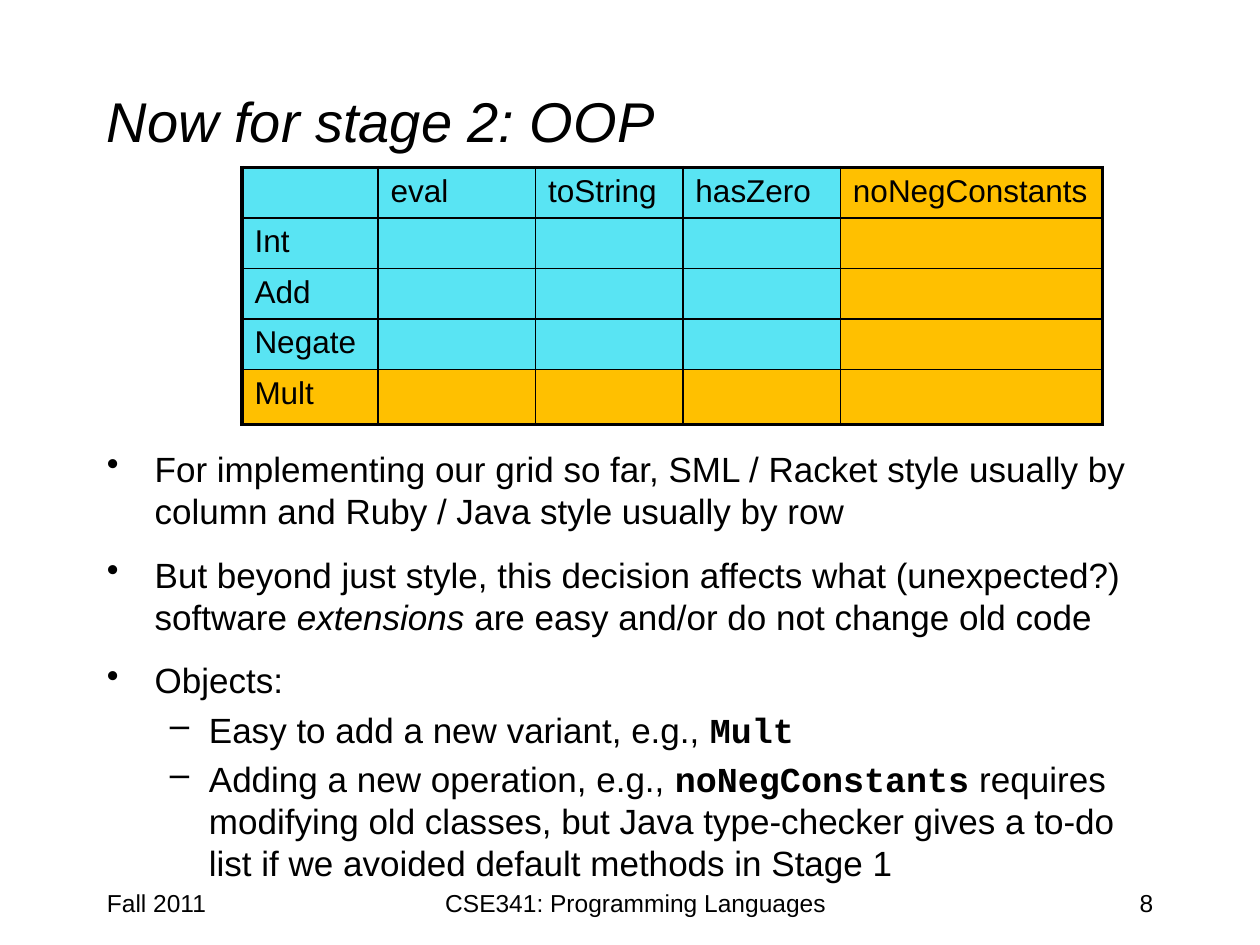
import pptx
import pptx.dml.color
import pptx.enum.text
import pptx.oxml.ns
import pptx.util
from lxml import etree

Inches, Pt = pptx.util.Inches, pptx.util.Pt
ALIGN = pptx.enum.text.PP_ALIGN
ANCHOR = pptx.enum.text.MSO_ANCHOR

BLACK, CYAN, AMBER = "000000", "59E4F3", "FFC000"
SANS, MONO = "Arial", "Courier New"

TITLE = "Now for stage 2: OOP"
OPERATIONS = ["", "eval", "toString", "hasZero", "noNegConstants"]
VARIANTS = ["Int", "Add", "Negate", "Mult"]
COLUMN_WIDTHS = [1.08, 1.25, 1.17, 1.25, 2.08]
ROW_HEIGHTS = [0.38, 0.38, 0.38, 0.38, 0.44]

# (level, space before in points, [(text, style), ...])
POINTS = [
    (0, 4, [("For implementing our grid so far, SML / Racket style usually by "
             "column and Ruby / Java style usually by row", "plain")]),
    (0, 12.5, [("But beyond just style, this decision affects what (unexpected?) software ", "plain"),
               ("extensions", "italic"),
               (" are easy and/or do not change old code", "plain")]),
    (0, 12.5, [("Objects:", "plain")]),
    (1, 4, [("Easy to add a new variant, e.g., ", "plain"), ("Mult", "code")]),
    (1, 4, [("Adding a new operation, e.g., ", "plain"), ("noNegConstants", "code"),
            (" requires modifying old classes, but Java type-checker gives a to-do "
             "list if we avoided default methods in Stage 1", "plain")]),
]
# level: (bullet, left margin, hanging indent)
BULLETS = {0: ("•", 0.38, 0.38), 1: ("–", 0.81, 0.31)}

# (text, left, width, alignment)
FOOTERS = [
    ("Fall 2011", 0.75, 2.08, ALIGN.LEFT),
    ("CSE341: Programming Languages", 3.17, 3.75, ALIGN.CENTER),
    ("8", 7.17, 2.08, ALIGN.RIGHT),
]


def color(value):
    return pptx.dml.color.RGBColor.from_string(value)


def set_font(font, size, name=SANS):
    font.size, font.name = Pt(size), name
    font.color.rgb = color(BLACK)


def add_text_frame(page, left, top, width, height, anchor=ANCHOR.TOP):
    box = page.shapes.add_textbox(Inches(left), Inches(top), Inches(width), Inches(height))
    frame = box.text_frame
    frame.word_wrap = True
    frame.vertical_anchor = anchor
    return frame


def add_line(page, text, place, size, align=ALIGN.LEFT, anchor=ANCHOR.TOP):
    """Add a text box holding one paragraph and return that paragraph."""
    paragraph = add_text_frame(page, *place, anchor).paragraphs[0]
    paragraph.text, paragraph.alignment = text, align
    set_font(paragraph.font, size)
    return paragraph


def add_bullet(paragraph, level):
    mark, margin, hanging = BULLETS[level]
    paragraph.level = level
    properties = paragraph._p.get_or_add_pPr()
    properties.set("marL", str(Inches(margin)))
    properties.set("indent", str(-Inches(hanging)))
    bullet = etree.Element(pptx.oxml.ns.qn("a:buChar"), char=mark)
    properties.find(pptx.oxml.ns.qn("a:spcBef")).addnext(bullet)


def add_points(page):
    frame = add_text_frame(page, 0.75, 3.5, 8.5, 3.67)
    for index, (level, space, spans) in enumerate(POINTS):
        paragraph = frame.add_paragraph() if index else frame.paragraphs[0]
        paragraph.space_before = Pt(space)
        set_font(paragraph.font, 20)
        add_bullet(paragraph, level)
        for text, style in spans:
            span = paragraph.add_run()
            span.text = text
            set_font(span.font, 20, MONO if style == "code" else SANS)
            span.font.bold = style == "code"
            span.font.italic = style == "italic"


def set_borders(cell, widths):
    """Draw the cell's edges; widths maps L, R, T, B to points."""
    properties = cell._tc.get_or_add_tcPr()
    for side, width in widths.items():
        line = etree.SubElement(properties, pptx.oxml.ns.qn(f"a:ln{side}"), w=str(Pt(width)))
        fill = etree.SubElement(line, pptx.oxml.ns.qn("a:solidFill"))
        etree.SubElement(fill, pptx.oxml.ns.qn("a:srgbClr"), val=BLACK)


def add_grid(page):
    last_row, last_column = len(VARIANTS), len(OPERATIONS) - 1
    table = page.shapes.add_table(
        last_row + 1, last_column + 1, Inches(1.92), Inches(1.33),
        Inches(sum(COLUMN_WIDTHS)), Inches(sum(ROW_HEIGHTS))).table
    for column, width in zip(table.columns, COLUMN_WIDTHS):
        column.width = Inches(width)
    for row, height in zip(table.rows, ROW_HEIGHTS):
        row.height = Inches(height)
    table.first_row = table.horz_banding = False

    for r in range(last_row + 1):
        for c in range(last_column + 1):
            cell = table.cell(r, c)
            outer = {"L": c == 0, "R": c == last_column, "T": r == 0, "B": r == last_row}
            set_borders(cell, {side: 2.25 if edge else 1 for side, edge in outer.items()})
            cell.fill.solid()
            cell.fill.fore_color.rgb = color(AMBER if outer["R"] or outer["B"] else CYAN)
            text = OPERATIONS[c] if r == 0 else VARIANTS[r - 1] if c == 0 else ""
            paragraph = cell.text_frame.paragraphs[0]
            if text:
                paragraph.text = text
            paragraph.space_before = Pt(3.6)
            set_font(paragraph.font, 18)


def main():
    deck = pptx.Presentation()
    deck.slide_width, deck.slide_height = Inches(10), Inches(7.5)
    page = deck.slides.add_slide(deck.slide_layouts[6])
    title = add_line(page, TITLE, (0.75, 0.33, 8.5, 1.25), 32, anchor=ANCHOR.MIDDLE)
    title.font.italic = True
    add_points(page)
    for text, left, width, align in FOOTERS:
        add_line(page, text, (left, 7, width, 0.5), 14, align)
    add_grid(page)
    deck.save("out.pptx")


if __name__ == "__main__":
    main()
